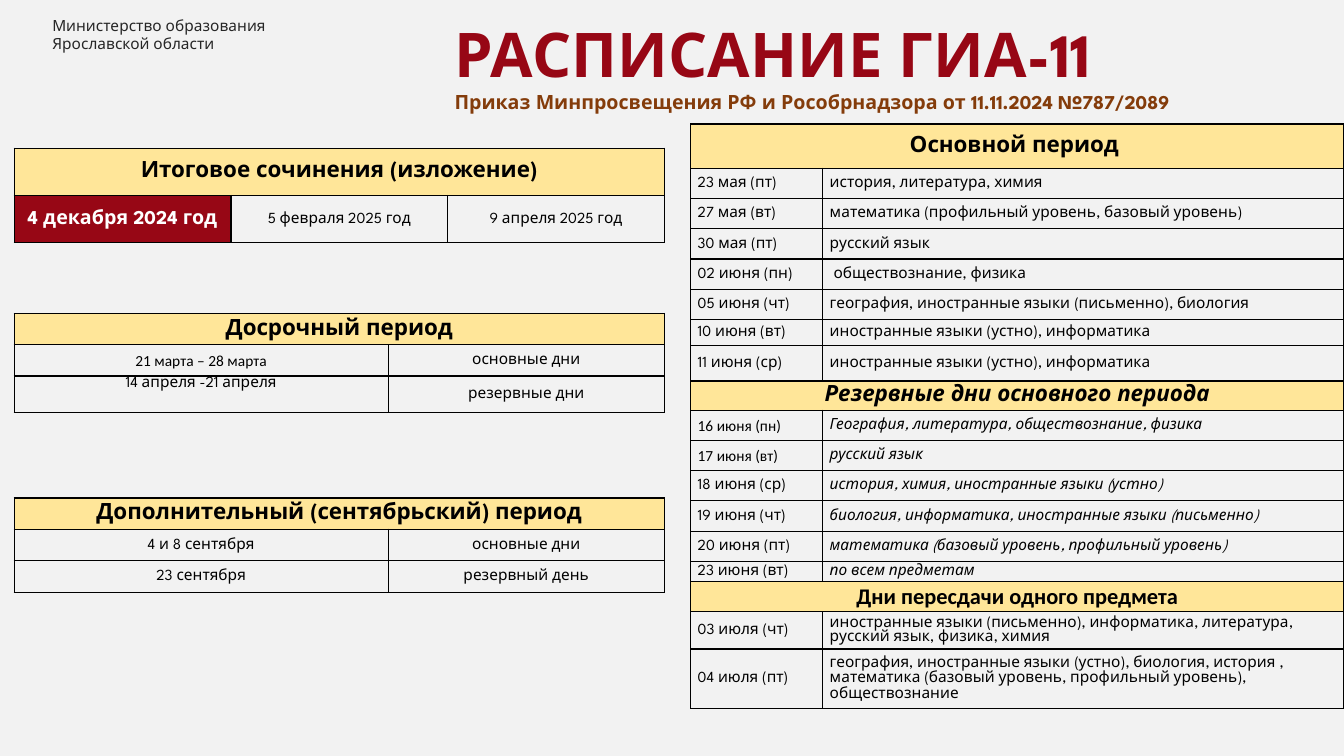
from lxml import etree
from pptx import Presentation
from pptx.dml.color import RGBColor
from pptx.enum.text import MSO_ANCHOR, PP_ALIGN
from pptx.oxml.ns import qn
from pptx.util import Inches, Pt

CENTER, LEFT = PP_ALIGN.CENTER, PP_ALIGN.LEFT
TOP, MIDDLE = MSO_ANCHOR.TOP, MSO_ANCHOR.MIDDLE

COLORS = {
    "background": "F2F2F2",
    "header": "FFE699",
    "accent": "970715",
    "order": "843C0B",
    "ministry": "262626",
    "text": "000000",
    "white": "FFFFFF",
}
SPARTAN, CALIBRI = "League Spartan", "Calibri"

MAIN_DAYS = [
    ("23 мая (пт)", "история, литература, химия"),
    ("27 мая (вт)", "математика (профильный уровень, базовый уровень)"),
    ("30 мая (пт)", "русский язык"),
    ("02 июня (пн)", " обществознание, физика"),
    ("05 июня (чт)", "география, иностранные языки (письменно), биология"),
    ("10 июня (вт)", "иностранные языки (устно), информатика"),
    ("11 июня (ср)", "иностранные языки (устно), информатика"),
]
RESERVE_DAYS = [
    ("16 июня (пн)", "География, литература, обществознание, физика"),
    ("17 июня (вт)", "русский язык"),
    ("18 июня (ср)", "история, химия, иностранные языки (устно)"),
    ("19 июня (чт)", "биология, информатика, иностранные языки (письменно)"),
    ("20 июня (пт)", "математика (базовый уровень, профильный уровень)"),
    ("23 июня (вт)", "по всем предметам"),
]
RETAKE_DAYS = [
    ("03 июля (чт)", "иностранные языки (письменно), информатика, литература, "
                     "русский язык, физика, химия"),
    ("04 июля (пт)", "география, иностранные языки (устно), биология, история , "
                     "математика (базовый уровень, профильный уровень), обществознание"),
]
MAIN_HEIGHTS = [0.44] + [0.3] * 5 + [0.26, 0.35, 0.29] + [0.3] * 5 + [0.2, 0.3, 0.37, 0.59]


def add_run(paragraph, text, size, color="text", font=SPARTAN, bold=False, italic=False):
    """Add one formatted run to a paragraph."""
    run = paragraph.add_run()
    run.text = text
    run.font.size = Pt(size)
    run.font.name = font
    run.font.bold = bold
    run.font.italic = italic
    run.font.color.rgb = RGBColor.from_string(COLORS[color])


def add_text(slide, left, top, width, height, lines, wrap=True):
    """Add a text box with one paragraph per (text, format) line."""
    frame = slide.shapes.add_textbox(
        Inches(left), Inches(top), Inches(width), Inches(height)).text_frame
    frame.word_wrap = wrap
    for index, (text, style) in enumerate(lines):
        paragraph = frame.paragraphs[0] if index == 0 else frame.add_paragraph()
        add_run(paragraph, text, **style)


def add_borders(cell):
    """Draw a thin black line on every side of a cell."""
    properties = cell._tc.get_or_add_tcPr()
    for side in ("a:lnL", "a:lnR", "a:lnT", "a:lnB"):
        line = etree.SubElement(properties, qn(side), w=str(Pt(1)))
        fill = etree.SubElement(line, qn("a:solidFill"))
        etree.SubElement(fill, qn("a:srgbClr"), val=COLORS["text"])


def add_grid(slide, left, top, widths, heights):
    """Add an empty bordered table and return it."""
    table = slide.shapes.add_table(
        len(heights), len(widths), Inches(left), Inches(top),
        Inches(sum(widths)), Inches(sum(heights))).table
    table.first_row = table.horz_banding = False
    for column, width in zip(table.columns, widths):
        column.width = Inches(width)
    for row, height in zip(table.rows, heights):
        row.height = Inches(height)
    for cell in table.iter_cells():
        add_borders(cell)
        cell.fill.background()
        cell.margin_left = cell.margin_right = Inches(0.07)
        cell.margin_top = cell.margin_bottom = 0
        cell.vertical_anchor = MIDDLE
    return table


def fill_cell(cell, text, align=CENTER, fill=None, spacing=1.07, size=11, **style):
    """Write text into a cell and colour it if a fill is given."""
    if fill:
        cell.fill.solid()
        cell.fill.fore_color.rgb = RGBColor.from_string(COLORS[fill])
    paragraph = cell.text_frame.paragraphs[0]
    paragraph.alignment = align
    paragraph.line_spacing = spacing
    add_run(paragraph, text, size, **style)


def fill_header(table, row, text, **style):
    """Merge a whole row into a section heading."""
    cell = table.cell(row, 0)
    cell.merge(table.cell(row, len(table.columns) - 1))
    fill_cell(cell, text, fill="header", size=16, bold=True, **style)


def add_essay_table(slide):
    """Add the table of essay dates."""
    table = add_grid(slide, 0.14, 1.47, [2.15] * 3, [0.47] * 2)
    fill_header(table, 0, "Итоговое сочинения (изложение)")
    fill_cell(table.cell(1, 0), "4 декабря 2024 год",
              fill="accent", size=14, color="white", bold=True)
    fill_cell(table.cell(1, 1), "5 февраля 2025 год")
    fill_cell(table.cell(1, 2), "9 апреля 2025 год")


def add_period_table(slide, top, last_height, title, rows, first_font=SPARTAN):
    """Add a two-column table of one exam period and return it."""
    table = add_grid(slide, 0.14, top, [3.71, 2.74], [0.31, 0.31, last_height])
    fill_header(table, 0, title)
    for row, (dates, kind) in enumerate(rows, 1):
        fill_cell(table.cell(row, 0), dates, font=first_font if row == 1 else SPARTAN)
        fill_cell(table.cell(row, 1), kind)
    return table


def add_main_table(slide):
    """Add the table of the main period with its reserve and retake days."""
    table = add_grid(slide, 6.85, 1.23, [1.31, 5.17], MAIN_HEIGHTS)
    sections = [
        ("Основной период ", {}, MAIN_DAYS),
        ("Резервные дни основного периода", {"italic": True}, RESERVE_DAYS),
        ("Дни пересдачи одного предмета", {"font": CALIBRI, "spacing": 1.0}, RETAKE_DAYS),
    ]
    single_spaced = (RESERVE_DAYS[-1], RETAKE_DAYS[0])
    row = 0
    for title, style, days in sections:
        fill_header(table, row, title, **style)
        for row, day in enumerate(days, row + 1):
            date, subjects = day
            fill_cell(table.cell(row, 0), date, LEFT,
                      font=CALIBRI if day in RESERVE_DAYS[:2] else SPARTAN)
            fill_cell(table.cell(row, 1), subjects, LEFT, italic=days is RESERVE_DAYS,
                      spacing=1.0 if day in single_spaced else 1.07)
        row += 1


def main():
    """Build the exam timetable slide."""
    presentation = Presentation()
    presentation.slide_width, presentation.slide_height = Inches(13.33), Inches(7.5)
    slide = presentation.slides.add_slide(presentation.slide_layouts[6])
    slide.background.fill.solid()
    slide.background.fill.fore_color.rgb = RGBColor.from_string(COLORS["background"])

    add_essay_table(slide)
    early = add_period_table(slide, 3.11, 0.36, "Досрочный период", [
        ("21 марта – 28 марта", "основные дни"),
        ("14 апреля -21 апреля", "резервные дни"),
    ], CALIBRI)
    early.cell(2, 0).vertical_anchor = TOP
    add_period_table(slide, 4.94, 0.32, "Дополнительный (сентябрьский) период", [
        ("4 и 8 сентября", "основные дни"),
        ("23 сентября", "резервный день"),
    ])
    add_text(slide, 4.41, 0.11, 8.9, 1.31, [
        ("РАСПИСАНИЕ ГИА-11", {"size": 44, "color": "accent", "bold": True}),
        ("Приказ Минпросвещения РФ и Рособрнадзора от 11.11.2024 №787/2089",
         {"size": 14, "color": "order", "bold": True}),
    ])
    ministry = {"size": 11, "color": "ministry"}
    add_text(slide, 0.42, 0.11, 2.48, 0.47, [
        ("Министерство образования", ministry),
        ("Ярославской области", ministry),
    ], wrap=False)
    add_main_table(slide)
    presentation.save("out.pptx")


if __name__ == "__main__":
    main()
